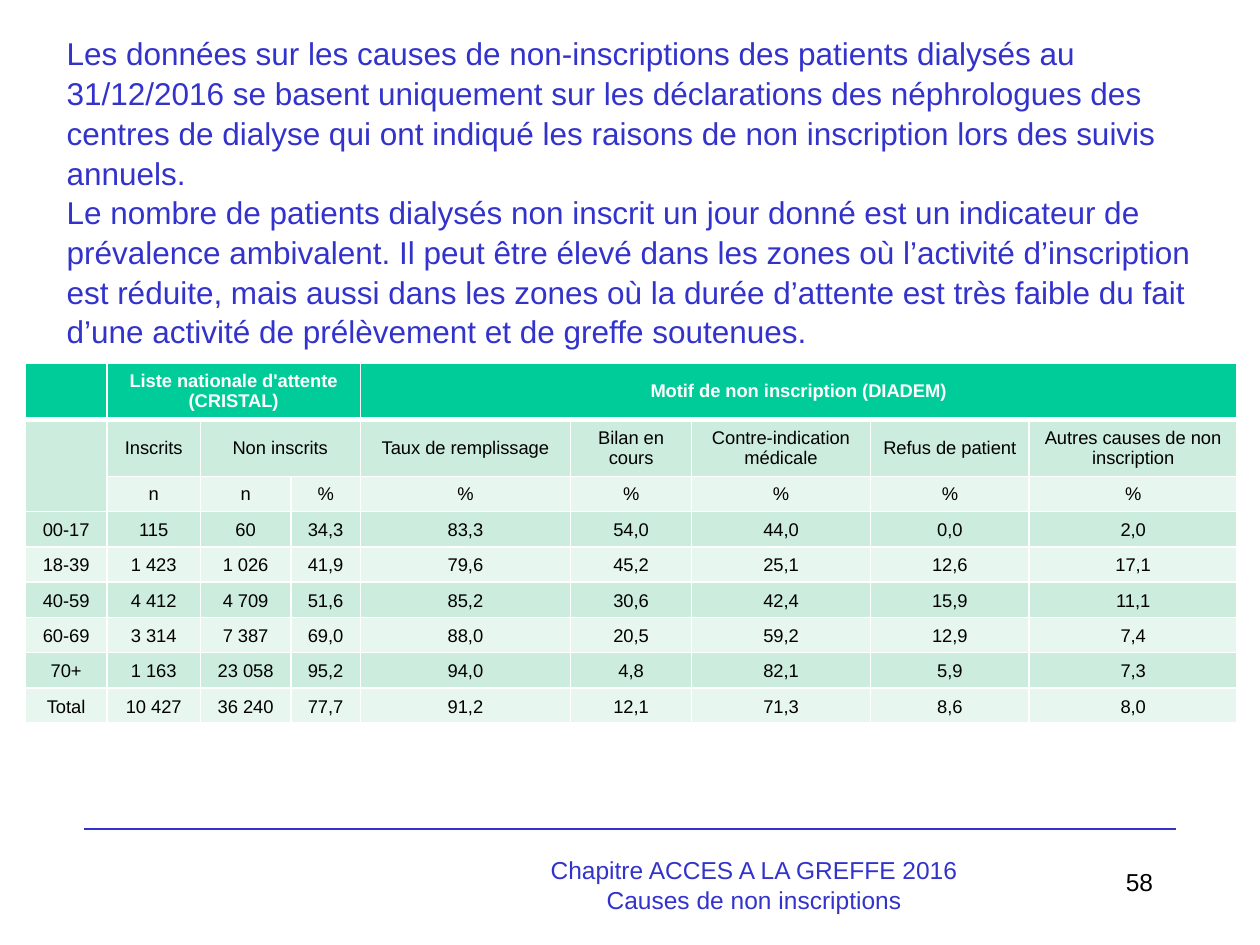
from lxml.etree import SubElement
from pptx import Presentation
from pptx.dml.color import RGBColor
from pptx.enum.shapes import MSO_CONNECTOR
from pptx.enum.text import MSO_ANCHOR, PP_ALIGN
from pptx.oxml.ns import qn
from pptx.util import Inches, Pt

BLUE, BLACK, WHITE = "3333CC", "000000", "FFFFFF"
GREEN, MINT, PALE = "00CC99", "CCECDE", "E7F6EF"

COMMENTARY = [
    "Les données sur les causes de non-inscriptions des patients dialysés au 31/12/2016 "
    "se basent uniquement sur les déclarations des néphrologues des centres de dialyse "
    "qui ont indiqué les raisons de non inscription lors des suivis annuels.",
    "Le nombre de patients dialysés non inscrit un jour donné est un indicateur de "
    "prévalence ambivalent. Il peut être élevé dans les zones où l’activité d’inscription "
    "est réduite, mais aussi dans les zones où la durée d’attente est très faible du fait "
    "d’une activité de prélèvement et de greffe soutenues.",
]
FOOTER = ["Chapitre ACCES A LA GREFFE 2016", "Causes de non inscriptions"]
PAGE_NUMBER = ["58"]

ROWS = [
    ["", "Liste nationale d'attente (CRISTAL)", "", "",
     "Motif de non inscription (DIADEM)", "", "", "", ""],
    ["", "Inscrits", "Non inscrits", "", "Taux de remplissage", "Bilan en cours",
     "Contre-indication médicale", "Refus de patient", "Autres causes de non inscription"],
    ["", "n", "n", "%", "%", "%", "%", "%", "%"],
    ["00-17", "115", "60", "34,3", "83,3", "54,0", "44,0", "0,0", "2,0"],
    ["18-39", "1 423", "1 026", "41,9", "79,6", "45,2", "25,1", "12,6", "17,1"],
    ["40-59", "4 412", "4 709", "51,6", "85,2", "30,6", "42,4", "15,9", "11,1"],
    ["60-69", "3 314", "7 387", "69,0", "88,0", "20,5", "59,2", "12,9", "7,4"],
    ["70+", "1 163", "23 058", "95,2", "94,0", "4,8", "82,1", "5,9", "7,3"],
    ["Total", "10 427", "36 240", "77,7", "91,2", "12,1", "71,3", "8,6", "8,0"],
]
COLUMN_WIDTHS = [0.65, 0.74, 0.72, 0.55, 1.67, 0.96, 1.42, 1.26, 1.65]
ROW_HEIGHTS = [0.45] * 2 + [0.28] * 7
MERGES = [((0, 1), (0, 3)), ((0, 4), (0, 8)), ((1, 0), (2, 0)), ((1, 2), (1, 3))]


def rgb(value):
    """Turn a hex string into a colour."""
    return RGBColor.from_string(value)


def write(paragraph, text, size, color, align, bold=False):
    """Put one formatted run in a paragraph."""
    paragraph.alignment = align
    run = paragraph.add_run()
    run.text = text
    run.font.name, run.font.size, run.font.bold = "Arial", Pt(size), bold
    run.font.color.rgb = rgb(color)


def add_text(slide, box, lines, size, color, align, spacing=1.0):
    """Add a wrapped text box with one paragraph per line."""
    frame = slide.shapes.add_textbox(*map(Inches, box)).text_frame
    frame.word_wrap = True
    for index, line in enumerate(lines):
        paragraph = frame.add_paragraph() if index else frame.paragraphs[0]
        paragraph.line_spacing = spacing
        write(paragraph, line, size, color, align)


def add_borders(cell, bottom_width):
    """Draw white borders around a cell."""
    properties = cell._tc.get_or_add_tcPr()
    widths = {"lnL": 1, "lnR": 1, "lnT": 1, "lnB": bottom_width}
    for position, (side, width) in enumerate(widths.items()):
        border = SubElement(properties, qn(f"a:{side}"), w=str(Pt(width)))
        fill = SubElement(border, qn("a:solidFill"))
        SubElement(fill, qn("a:srgbClr"), val=WHITE)
        properties.insert(position, border)


def add_causes_table(slide):
    """Add the table of registrations and causes by age group."""
    size = sum(COLUMN_WIDTHS), sum(ROW_HEIGHTS)
    table = slide.shapes.add_table(
        len(ROWS), len(COLUMN_WIDTHS), *map(Inches, (0.2, 2.88, *size))).table
    for column, width in zip(table.columns, COLUMN_WIDTHS):
        column.width = Inches(width)
    for row, height in zip(table.rows, ROW_HEIGHTS):
        row.height = Inches(height)
    for start, end in MERGES:
        table.cell(*start).merge(table.cell(*end))
    for r, texts in enumerate(ROWS):
        heading = r == 0
        shade = GREEN if heading else MINT if r % 2 else PALE
        for c, text in enumerate(texts):
            cell = table.cell(r, c)
            cell.fill.solid()
            cell.fill.fore_color.rgb = rgb(shade)
            cell.margin_left = cell.margin_right = Inches(0.05)
            cell.vertical_anchor = MSO_ANCHOR.MIDDLE if r < 3 else MSO_ANCHOR.BOTTOM
            add_borders(cell, 3 if heading else 1)
            if text:
                write(cell.text_frame.paragraphs[0], text, 10.5,
                      WHITE if heading else BLACK, PP_ALIGN.CENTER, heading)


def main():
    """Build and save the slide."""
    deck = Presentation()
    deck.slide_width, deck.slide_height = Inches(10), Inches(7.5)
    slide = deck.slides.add_slide(deck.slide_layouts[6])
    rule = slide.shapes.add_connector(
        MSO_CONNECTOR.STRAIGHT, *map(Inches, (0.67, 6.58, 9.33, 6.58)))
    rule.line.color.rgb = rgb(BLUE)
    rule.line.width = Pt(1)
    SubElement(rule._element.spPr, qn("a:effectLst"))
    add_text(slide, (7.17, 6.83, 2.08, 0.5), PAGE_NUMBER, 14, BLACK, PP_ALIGN.RIGHT)
    add_text(slide, (3.42, 6.74, 5.13, 0.5), FOOTER, 14, BLUE, PP_ALIGN.CENTER)
    add_causes_table(slide)
    add_text(slide, (0.43, 0.21, 9.29, 3.13), COMMENTARY, 18, BLUE, PP_ALIGN.LEFT, 1.05)
    deck.save("out.pptx")


if __name__ == "__main__":
    main()
